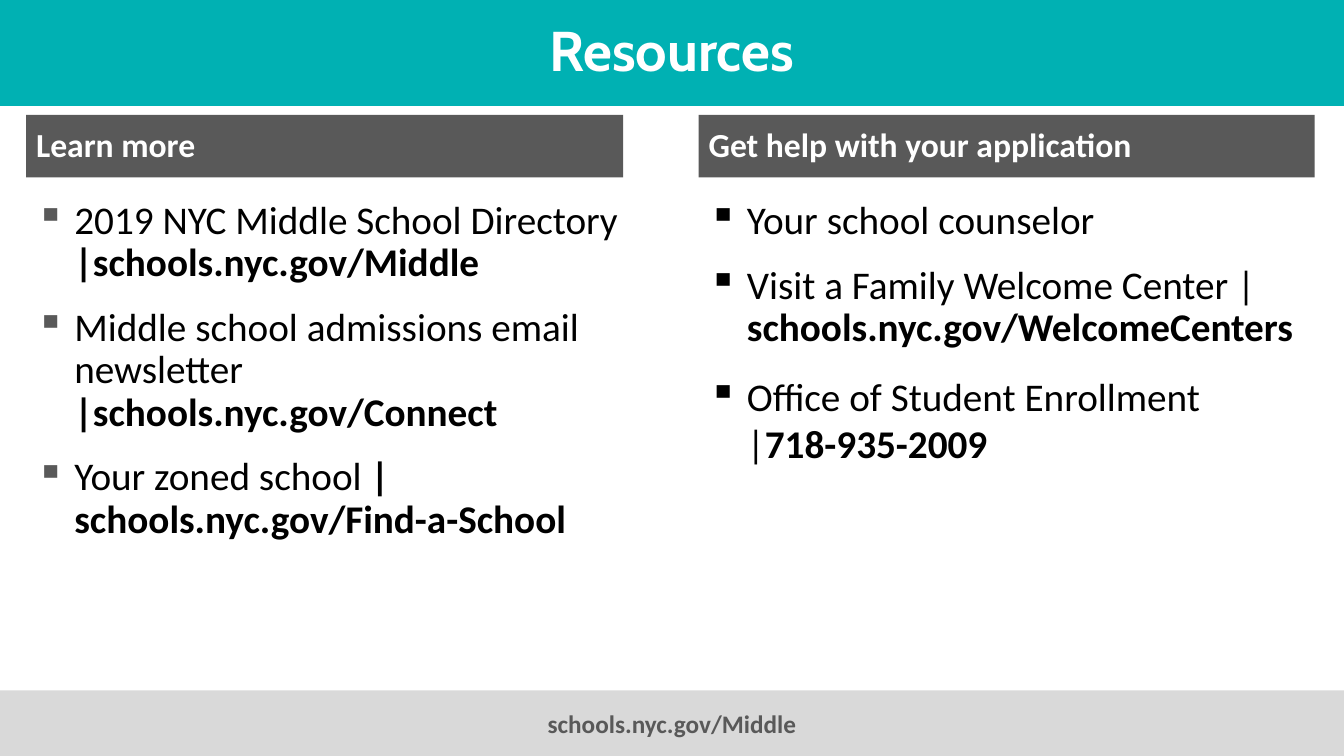
from dataclasses import dataclass

from lxml import etree
from pptx import Presentation
from pptx.dml.color import RGBColor
from pptx.enum.shapes import MSO_SHAPE
from pptx.enum.text import MSO_ANCHOR, PP_ALIGN
from pptx.oxml.ns import qn
from pptx.util import Inches, Pt

RECTANGLE = MSO_SHAPE.RECTANGLE
MIDDLE = MSO_ANCHOR.MIDDLE
LEFT = PP_ALIGN.LEFT
CENTER = PP_ALIGN.CENTER
SLIDE_WIDTH, SLIDE_HEIGHT = 13.33, 7.5
TEXT_INDENT = 0.38
BREAK = "\n"


@dataclass(frozen=True)
class Theme:
    teal: str = "00B1B3"
    dark: str = "595959"
    pale: str = "D9D9D9"
    white: str = "FFFFFF"
    black: str = "000000"
    title_font: str = "Cabin"
    body_font: str = "Calibri"
    title_size: int = 40
    heading_size: int = 24
    body_size: int = 28
    footer_size: int = 18


def apply_format(target, values):
    for name, value in values.items():
        setattr(target, name, value)


class SlideBuilder:
    def __init__(self, slide, theme):
        self.slide = slide
        self.theme = theme

    def style_font(self, font, size, color, bold, name=None):
        apply_format(font, {
            "name": name or self.theme.body_font,
            "size": Pt(size),
            "bold": bold,
        })
        font.color.rgb = RGBColor.from_string(color)

    def add_band(self, box, text, fill, color, size, align=CENTER, font=None, spacing=None):
        shape = self.slide.shapes.add_shape(RECTANGLE, *map(Inches, box))
        shape.shadow.inherit = False
        shape.fill.solid()
        shape.fill.fore_color.rgb = RGBColor.from_string(fill)
        shape.line.fill.background()
        apply_format(shape.text_frame, {"word_wrap": True, "vertical_anchor": MIDDLE})
        paragraph = shape.text_frame.paragraphs[0]
        apply_format(paragraph, {"alignment": align, "line_spacing": spacing})
        run = paragraph.add_run()
        run.text = text
        self.style_font(run.font, size, color, True, font)

    def add_list(self, box, items, bullet_color):
        frame = self.slide.shapes.add_textbox(*map(Inches, box)).text_frame
        frame.word_wrap = True
        for index, (parts, values, has_bullet) in enumerate(items):
            paragraph = frame.paragraphs[0] if index == 0 else frame.add_paragraph()
            apply_format(paragraph, values)
            self.set_indent(paragraph, bullet_color if has_bullet else None)
            for text, bold in parts:
                if text == BREAK:
                    paragraph.add_line_break()
                    continue
                run = paragraph.add_run()
                run.text = text
                self.style_font(run.font, self.theme.body_size, self.theme.black, bold)

    def set_indent(self, paragraph, bullet_color):
        properties = paragraph._p.get_or_add_pPr()
        properties.set("marL", str(Inches(TEXT_INDENT)))
        properties.set("indent", str(-Inches(TEXT_INDENT) if bullet_color else 0))
        if bullet_color:
            color = etree.SubElement(properties, qn("a:buClr"))
            etree.SubElement(color, qn("a:srgbClr"), val=bullet_color)
            etree.SubElement(properties, qn("a:buChar"), char="▪")


def main():
    theme = Theme()
    presentation = Presentation()
    presentation.slide_width = Inches(SLIDE_WIDTH)
    presentation.slide_height = Inches(SLIDE_HEIGHT)
    builder = SlideBuilder(presentation.slides.add_slide(presentation.slide_layouts[6]), theme)

    tight = {"line_spacing": 0.9, "space_before": Pt(10), "space_after": Pt(6)}
    office_name = {"line_spacing": 1.0, "space_before": Pt(10), "space_after": Pt(0)}
    office_phone = {"line_spacing": 1.0, "space_before": Pt(0), "space_after": Pt(6)}
    line_break = (BREAK, False)

    learn_items = [
        ([("2019 NYC Middle School Directory ", False), line_break,
          ("|schools.nyc.gov/Middle", True)], tight, True),
        ([("Middle school admissions email newsletter ", False), line_break,
          ("|schools.nyc.gov/Connect", True)], tight, True),
        ([("Your zoned school ", False), ("|", True), line_break,
          ("schools.nyc.gov/Find-a-School", True)], tight, True),
    ]
    help_items = [
        ([("Your school counselor", False)], tight, True),
        ([("Visit a Family Welcome Center |", False), line_break,
          ("schools.nyc.gov/WelcomeCenters", True)], tight, True),
        ([("Office of Student Enrollment", False)], office_name, True),
        ([("|", False), ("718-935-2009", True)], office_phone, False),
    ]
    columns = [
        ("Learn more", 0.26, 5.92, 6.27, learn_items, theme.dark),
        ("Get help with your application", 6.93, 6.11, 6.24, help_items, theme.black),
    ]

    builder.add_band((0, 0, SLIDE_WIDTH, 1.05), "Resources", theme.teal, theme.white,
                     theme.title_size, font=theme.title_font, spacing=0.9)
    for heading, left, heading_width, list_width, items, bullet_color in columns:
        builder.add_band((left, 1.14, heading_width, 0.62), heading, theme.dark,
                         theme.white, theme.heading_size, align=LEFT, spacing=0.9)
        builder.add_list((left, 1.94, list_width, 4.03), items, bullet_color)
    builder.add_band((0, 6.85, SLIDE_WIDTH, 0.65), "schools.nyc.gov/Middle", theme.pale,
                     theme.dark, theme.footer_size)
    presentation.save("out.pptx")


if __name__ == "__main__":
    main()
